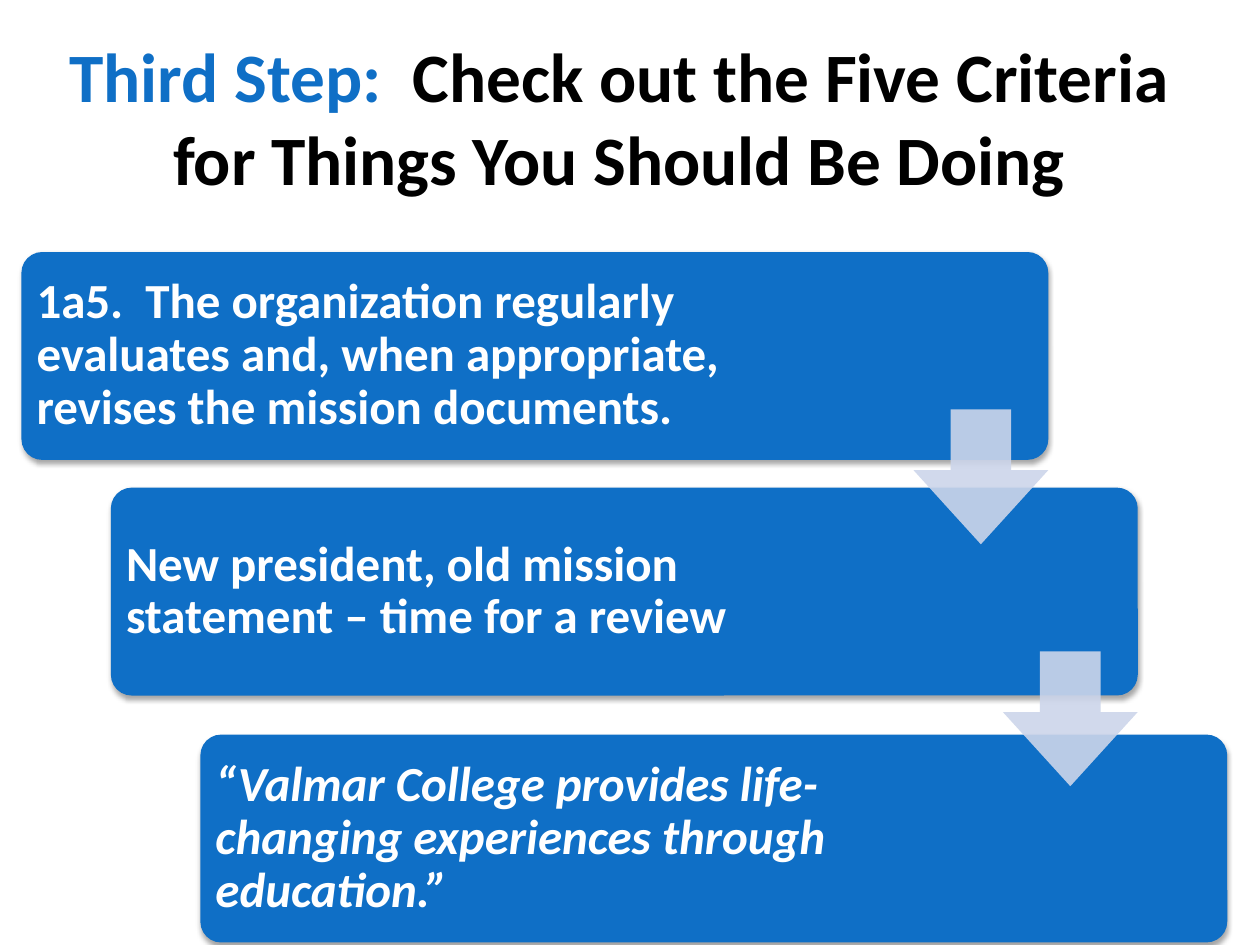
"""Build the slide on the third step: three cascading cards joined by arrows."""
from lxml.etree import SubElement
from pptx import Presentation
from pptx.dml.color import RGBColor
from pptx.enum.shapes import MSO_SHAPE as Shape
from pptx.enum.text import MSO_ANCHOR as Anchor, MSO_AUTO_SIZE as AutoSize, PP_ALIGN as Align
from pptx.oxml.ns import qn
from pptx.util import Inches, Pt

COLORS = {"blue": "0F6FC6", "black": "000000", "white": "FFFFFF", "arrow": "CCD5EA"}
FONT = "Calibri"
CARD_LEFT, CARD_STEP, CARD_WIDTH, CARD_HEIGHT = 0.17, 0.71, 8.15, 1.65
ARROW_SIZE = 1.07
CARDS = [
    (2, 6.46, "1a5.  The organization regularly evaluates and, when appropriate, "
              "revises the mission documents.", False),
    (3.87, 6.35, "New president, old mission statement – time for a review", False),
    (5.83, 6.35, "“Valmar College provides life-changing experiences through education.”", True),
]
ARROW_TOPS = [3.25, 5.17]


def rgb(name):
    """Return the named colour."""
    return RGBColor.from_string(COLORS[name])


def style_font(font, size, italic=None):
    """Apply the bold slide font at the given size."""
    font.name, font.size, font.bold, font.italic = FONT, Pt(size), True, italic


def add_title(slide, lead, rest):
    """Fill the title placeholder with a coloured lead and the remaining words."""
    title = slide.shapes.title
    title.left, title.top = Inches(0.25), Inches(0.3)
    title.width, title.height = Inches(9.33), Inches(1.25)
    frame = title.text_frame
    frame.auto_size, frame.vertical_anchor = AutoSize.NONE, Anchor.MIDDLE
    heading = frame.paragraphs[0]
    heading.alignment = Align.CENTER
    style_font(heading.font, 39.6)
    for words, color in ((lead, "blue"), (rest, "black")):
        run = heading.add_run()
        run.text = words
        run.font.color.rgb = rgb(color)


def add_solid(slide, preset, box, color, adjustments):
    """Add a filled preset shape without line or shadow."""
    solid = slide.shapes.add_shape(preset, *map(Inches, box))
    for index, value in enumerate(adjustments):
        solid.adjustments[index] = value
    solid.fill.solid()
    solid.fill.fore_color.rgb = rgb(color)
    solid.line.fill.background()
    solid.shadow.inherit = False
    return solid


def add_soft_shadow(card):
    """Give the card a soft shadow straight below it."""
    effects = card._element.spPr.find(qn("a:effectLst"))
    shadow = SubElement(effects, qn("a:outerShdw"), blurRad=str(Pt(3.1)), dist=str(Pt(1.8)),
                        dir="5400000", rotWithShape="0")
    tint = SubElement(shadow, qn("a:srgbClr"), val=COLORS["black"])
    SubElement(tint, qn("a:alpha"), val="35000")


def add_card(slide, left, top, text_width, words, italic):
    """Add a rounded card and its narrower text."""
    card = add_solid(slide, Shape.ROUNDED_RECTANGLE, (left, top, CARD_WIDTH, CARD_HEIGHT),
                     "blue", [0.1])
    add_soft_shadow(card)
    box = map(Inches, (left, top, text_width, CARD_HEIGHT))
    frame = slide.shapes.add_textbox(*box).text_frame
    frame.word_wrap, frame.vertical_anchor = True, Anchor.MIDDLE
    frame.margin_left = frame.margin_right = Inches(0.12)
    frame.margin_top = frame.margin_bottom = Inches(0.12)
    statement = frame.paragraphs[0]
    statement.text = words
    statement.line_spacing = 0.9
    style_font(statement.font, 28, italic)
    statement.font.color.rgb = rgb("white")


def add_arrow(slide, left, top):
    """Add a slightly transparent arrow that leads to the next card."""
    arrow = add_solid(slide, Shape.DOWN_ARROW, (left, top, ARROW_SIZE, ARROW_SIZE),
                      "arrow", [0.45, 0.55])
    tint = arrow._element.spPr.find(qn("a:solidFill")).find(qn("a:srgbClr"))
    SubElement(tint, qn("a:alpha"), val="90000")


def main():
    """Build and save the slide."""
    deck = Presentation()
    deck.slide_width, deck.slide_height = Inches(10), Inches(7.5)
    slide = deck.slides.add_slide(deck.slide_layouts.get_by_name("Title Only"))
    add_title(slide, "Third Step:  ", "Check out the Five Criteria for Things You Should Be Doing")
    for step, (top, text_width, words, italic) in enumerate(CARDS):
        add_card(slide, CARD_LEFT + step * CARD_STEP, top, text_width, words, italic)
    for step, top in enumerate(ARROW_TOPS):
        card_right = CARD_LEFT + step * CARD_STEP + CARD_WIDTH
        add_arrow(slide, card_right - ARROW_SIZE, top)
    deck.save("out.pptx")


if __name__ == "__main__":
    main()
